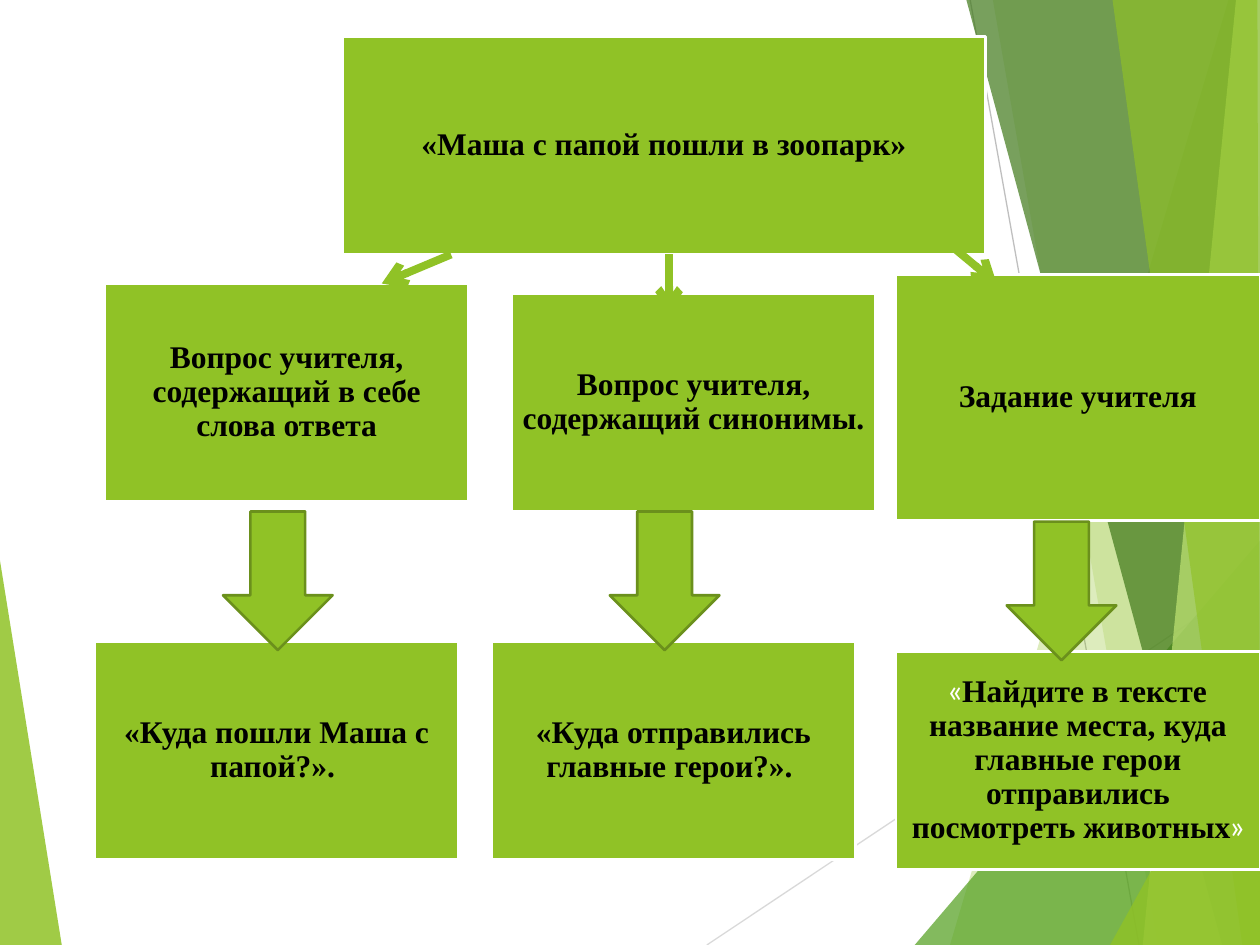
from dataclasses import dataclass

import pptx
import pptx.dml.color
import pptx.enum.shapes
import pptx.enum.text
import pptx.oxml
import pptx.oxml.ns
import pptx.util

Inches = pptx.util.Inches
Pt = pptx.util.Pt
Shape = pptx.enum.shapes.MSO_SHAPE

COLORS = {
    "lime": "90C226",
    "olive": "6B901C",
    "green": "54A021",
    "forest": "3F7819",
    "pale": "C0E474",
    "light_gray": "D9D9D9",
    "gray": "BFBFBF",
    "white": "FFFFFF",
    "black": "000000",
}
SERIF = "Times New Roman"
SANS = "Lato"
BOX_WIDTH, BOX_HEIGHT = 2.89, 1.73


@dataclass
class Facet:
    color: str
    opacity: int
    points: list[tuple[float, float]]


@dataclass
class Line:
    start: tuple[float, float]
    end: tuple[float, float]
    color: str = "lime"
    width: float = 4.5
    arrow: bool = True


@dataclass
class Box:
    left: float
    top: float
    text: str
    width: float = BOX_WIDTH
    height: float = BOX_HEIGHT
    quotes: tuple[str, str] = ("", "")


# Background decoration, from back to front
LEFT_FACET = Facet("lime", 85, [(0, 4.45), (0.49, 7.5), (0, 7.5)])
THIN_LINES = [
    Line((5.61, 7.5), (10, 4.57), "light_gray", 0.75, False),
    Line((7.7, 0), (9.04, 7.5), "gray", 0.75, False),
]
RIGHT_FACETS = [
    Facet("lime", 30, [(9.75, 0), (7.54, 7.5), (10, 7.5), (10, 0)]),
    Facet("lime", 20, [(7.88, 0), (9.19, 7.5), (10, 7.5), (10, 0)]),
    Facet("green", 72, [(7.26, 7.5), (10, 4.29), (10, 7.5)]),
    Facet("forest", 70, [(7.67, 0), (9.7, 7.5), (10, 7.5), (10, 0)]),
    Facet("pale", 70, [(9.81, 0), (9.07, 7.5), (10, 7.5), (10, 0)]),
    Facet("lime", 65, [(8.83, 0), (9.86, 7.5), (10, 7.5), (9.98, 0)]),
    Facet("lime", 80, [(8.81, 7.5), (10, 5.35), (10, 7.5)]),
]

# Diagram
BOXES = [
    Box(0.83, 2.25, "Вопрос учителя, содержащий в себе слова ответа"),
    Box(4.06, 2.33, "Вопрос учителя, содержащий синонимы. "),
    Box(7.11, 2.18, "Задание учителя", height=1.95),
    Box(0.75, 5.09, "«Куда пошли Маша с папой?». "),
    Box(3.9, 5.09, "«Куда отправились главные герои?». "),
    Box(7.11, 5.17, "Найдите в тексте название места, куда главные герои "
        "отправились посмотреть животных", quotes=("«", "»")),
    Box(2.72, 0.29, "«Маша с папой пошли в зоопарк»", width=5.1),
]
BLOCK_ARROWS = [(1.77, 4.06), (4.84, 4.06), (7.99, 4.14)]
BRANCHES = [
    Line((3.58, 2.02), (3.03, 2.25)),
    Line((5.31, 2.02), (5.31, 2.49)),
    Line((7.44, 1.86), (7.91, 2.25)),
]


def rgb(name: str) -> pptx.dml.color.RGBColor:
    return pptx.dml.color.RGBColor.from_string(COLORS[name])


def add_child(parent, tag: str, **attributes: str):
    child = pptx.oxml.parse_xml(f"<{tag} {pptx.oxml.ns.nsdecls('a')}/>")
    for name, value in attributes.items():
        child.set(name, value)
    parent.append(child)
    return child


def paint(shape, fill: str, outline: str | None = None) -> None:
    shape.shadow.inherit = False
    shape.fill.solid()
    shape.fill.fore_color.rgb = rgb(fill)
    if outline is None:
        shape.line.fill.background()
    else:
        shape.line.color.rgb = rgb(outline)
        shape.line.width = Pt(1.5)


def add_facet(page, facet: Facet) -> None:
    points = [(Inches(x), Inches(y)) for x, y in facet.points]
    builder = page.shapes.build_freeform(*points[0])
    builder.add_line_segments(points[1:], close=True)
    shape = builder.convert_to_shape()
    paint(shape, facet.color)
    color = shape._element.spPr.find(".//" + pptx.oxml.ns.qn("a:srgbClr"))
    add_child(color, "a:alpha", val=str(facet.opacity * 1000))


def add_line(page, line: Line) -> None:
    connector = page.shapes.add_connector(
        pptx.enum.shapes.MSO_CONNECTOR.STRAIGHT,
        *(Inches(value) for value in line.start + line.end))
    connector.line.color.rgb = rgb(line.color)
    connector.line.width = Pt(line.width)
    if line.arrow:
        add_child(connector.line._get_or_add_ln(), "a:tailEnd", type="arrow")
    add_child(connector._element.spPr, "a:effectLst")


def add_span(para, text: str, *, font: str = SERIF, color: str = "black",
             bold: bool = True, size: float = 18) -> None:
    span = para.add_run()
    span.text = text
    span.font.name = font
    span.font.size = Pt(size)
    span.font.bold = bold
    span.font.color.rgb = rgb(color)


def add_shape(page, kind, left: float, top: float, width: float,
              height: float, outline: str):
    shape = page.shapes.add_shape(
        kind, Inches(left), Inches(top), Inches(width), Inches(height))
    paint(shape, "lime", outline)
    return shape


def add_box(page, box: Box) -> None:
    shape = add_shape(page, Shape.RECTANGLE, box.left, box.top,
                      box.width, box.height, "white")
    frame = shape.text_frame
    frame.word_wrap = True
    frame.vertical_anchor = pptx.enum.text.MSO_ANCHOR.MIDDLE
    frame.margin_left = frame.margin_right = Inches(0.07)
    frame.margin_top = frame.margin_bottom = Inches(0.07)
    para = frame.paragraphs[0]
    para.alignment = pptx.enum.text.PP_ALIGN.CENTER
    para.line_spacing = 0.9
    opening, closing = box.quotes
    if opening:
        add_span(para, opening, font=SANS, color="white", bold=False)
    add_span(para, box.text)
    if closing:
        add_span(para, closing, font=SANS, color="white", bold=False)


def main() -> None:
    deck = pptx.Presentation()
    deck.slide_width, deck.slide_height = Inches(10), Inches(7.5)
    page = deck.slides.add_slide(deck.slide_layouts[6])

    add_facet(page, LEFT_FACET)
    for line in THIN_LINES:
        add_line(page, line)
    for facet in RIGHT_FACETS:
        add_facet(page, facet)

    for box in BOXES:
        add_box(page, box)
    for left, top in BLOCK_ARROWS:
        add_shape(page, Shape.DOWN_ARROW, left, top, 0.87, 1.1, "olive")
    for branch in BRANCHES:
        add_line(page, branch)

    deck.save("out.pptx")


if __name__ == "__main__":
    main()
